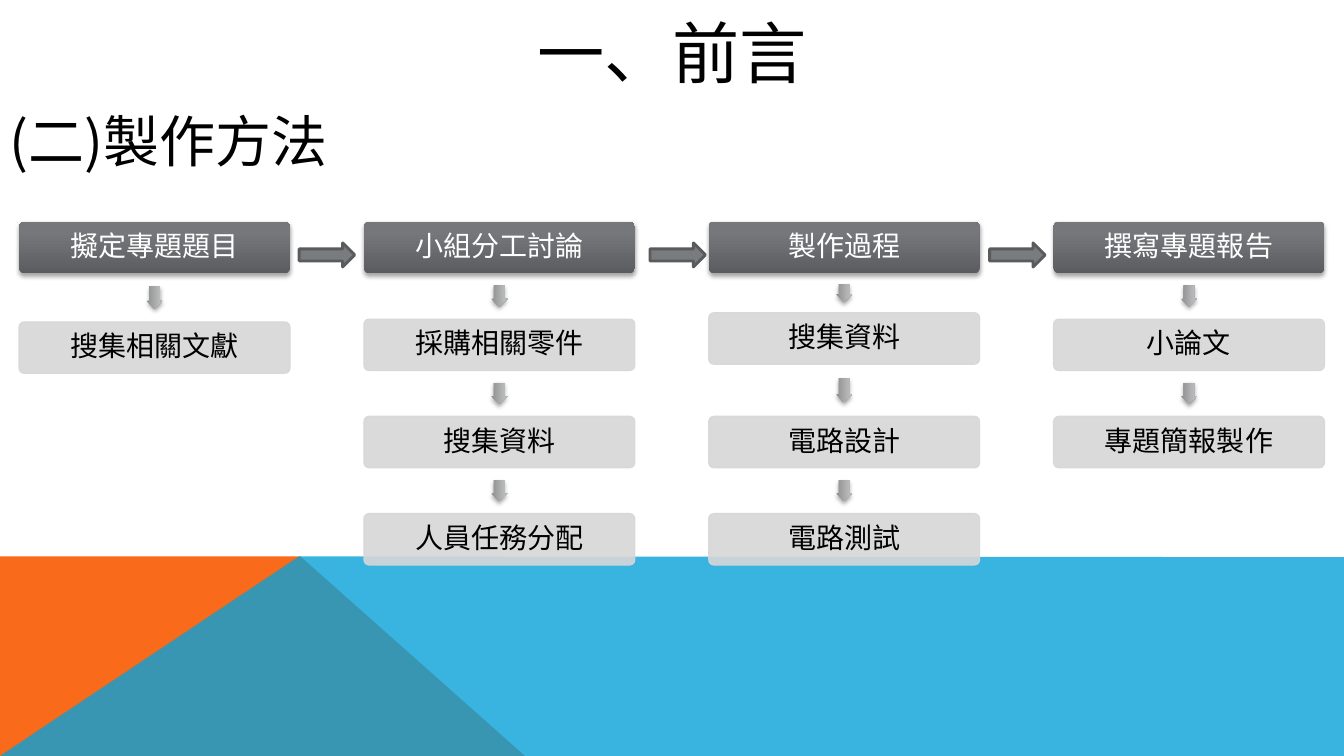
from dataclasses import dataclass

from lxml import etree
from pptx import Presentation
from pptx.dml.color import RGBColor
from pptx.enum.shapes import MSO_SHAPE
from pptx.enum.text import MSO_ANCHOR, PP_ALIGN
from pptx.oxml.ns import qn
from pptx.util import Cm, Pt

ROUNDED = MSO_SHAPE.ROUNDED_RECTANGLE
ARROW = MSO_SHAPE.RIGHT_ARROW
MIDDLE, TOP = MSO_ANCHOR.MIDDLE, MSO_ANCHOR.TOP
CENTER, LEFT = PP_ALIGN.CENTER, PP_ALIGN.LEFT


@dataclass(frozen=True)
class Theme:
    font: str = "Noto Sans CJK SC"
    title_size: int = 48
    subtitle_size: int = 40
    step_size: int = 20
    dark_text: str = "000000"
    light_text: str = "FFFFFF"
    orange: str = "F96A1B"
    blue: str = "08A1D9"
    header: tuple = ("5A5C5F", "75777B")
    step: str = "D7D7D8"
    step_arrow: tuple = ("8E8E8F", "B8B9BA")
    stage_arrow: str = "797B7E"
    stage_arrow_line: str = "5A5B5D"


THEME = Theme()
SLIDE_WIDTH, SLIDE_HEIGHT = 33.87, 19.05
BOX_WIDTH, BOX_HEIGHT = 6.83, 1.3
COLUMN_PITCH, ROW_PITCH = 8.69, 2.45

# Each stage: heading, then steps with their offset (cm) from the regular row
STAGES = [
    ("擬定專題題目", [("搜集相關文獻", 0.07)]),
    ("小組分工討論", [("採購相關零件", 0), ("搜集資料", 0), ("人員任務分配", 0)]),
    ("製作過程", [("搜集資料", -0.16), ("電路設計", 0), ("電路測試", 0)]),
    ("撰寫專題報告", [("小論文", 0), ("專題簡報製作", 0)]),
]
STAGE_ARROW_GAPS = [0.23, 0.38, 0.25]


def set_solid(color_format, color, opacity=100):
    """Fill with one colour; opacity is in percent."""
    color_format.solid()
    color_format.fore_color.rgb = RGBColor.from_string(color)
    if opacity < 100:
        solid = color_format._xPr.find(qn("a:solidFill"))
        etree.SubElement(solid[0], qn("a:alpha"), val=str(opacity * 1000))


def set_gradient(shape, colors):
    shape.fill.gradient()
    shape.fill.gradient_angle = 90
    for stop, color, position in zip(shape.fill.gradient_stops, colors, (0, 0.8)):
        stop.color.rgb = RGBColor.from_string(color)
        stop.position = position
    shape.line.fill.background()


def add_soft_shadow(shape):
    effects = shape._element.spPr.find(qn("a:effectLst"))
    shadow = etree.SubElement(
        effects, qn("a:outerShdw"), blurRad=str(Pt(3.1)), dist=str(Pt(1.8)),
        dir="5400000", rotWithShape="0")
    color = etree.SubElement(shadow, qn("a:srgbClr"), val="000000")
    etree.SubElement(color, qn("a:alpha"), val="35000")


def write_text(box, text, size, color, align=CENTER, anchor=MIDDLE):
    frame = box.text_frame
    frame.word_wrap = True
    frame.vertical_anchor = anchor
    para = frame.paragraphs[0]
    para.text = text
    para.alignment = align
    para.font.size = Pt(size)
    para.font.name = THEME.font
    para.font.color.rgb = RGBColor.from_string(color)
    defaults = para._p.get_or_add_pPr().find(qn("a:defRPr"))
    etree.SubElement(defaults, qn("a:ea"), typeface=THEME.font)
    return frame


def add_plain_shape(page, kind, left, top, width, height):
    shape = page.shapes.add_shape(kind, Cm(left), Cm(top), Cm(width), Cm(height))
    shape.shadow.inherit = False
    return shape


def add_banner(page, left, top, width, height):
    """Place the orange triangle and the translucent blue band over it."""
    bottom, right = top + height, left + width
    outlines = [
        (THEME.orange, 100, [(left, bottom), (left, top), (left + 7.57, top),
                             (left + 13.23, bottom)]),
        (THEME.blue, 80, [(left, bottom), (left + 7.54, top), (right, top + 0.02),
                          (right, bottom)]),
    ]
    for color, opacity, points in outlines:
        corners = [(Cm(x), Cm(y)) for x, y in points]
        builder = page.shapes.build_freeform(*corners[0])
        builder.add_line_segments(corners[1:], close=True)
        shape = builder.convert_to_shape()
        shape.shadow.inherit = False
        set_solid(shape.fill, color, opacity)
        shape.line.fill.background()


def add_heading(page, left, top, width, height, text, size, align, anchor):
    box = page.shapes.add_textbox(Cm(left), Cm(top), Cm(width), Cm(height))
    write_text(box, text, size, THEME.dark_text, align, anchor)


def add_label_box(page, left, top, text, color):
    shape = add_plain_shape(page, ROUNDED, left, top, BOX_WIDTH, BOX_HEIGHT)
    shape.adjustments[0] = 0.1
    frame = write_text(shape, text, THEME.step_size, color)
    frame.margin_left = frame.margin_right = Cm(0.08)
    frame.margin_top = frame.margin_bottom = Cm(0.08)
    frame.paragraphs[0].line_spacing = 0.9
    return shape


def add_step_arrow(page, center, top, bottom):
    """Place a down-pointing arrow in the gap between two boxes."""
    length, thickness = 0.47 * (bottom - top), 0.41
    arrow = add_plain_shape(page, ARROW, center - length / 2,
                            (top + bottom - thickness) / 2, length, thickness)
    arrow.rotation = 90
    arrow.adjustments[0] = 0.667
    set_gradient(arrow, THEME.step_arrow)
    add_soft_shadow(arrow)


def add_stage(page, left, top, heading, steps):
    header = add_label_box(page, left, top, heading, THEME.light_text)
    set_gradient(header, THEME.header)
    add_soft_shadow(header)
    above = top + BOX_HEIGHT
    for row, (text, offset) in enumerate(steps, start=1):
        step_top = top + row * ROW_PITCH + offset
        add_step_arrow(page, left + BOX_WIDTH / 2, above, step_top)
        step = add_label_box(page, left, step_top, text, THEME.dark_text)
        set_solid(step.fill, THEME.step, 90)
        set_solid(step.line.fill, THEME.step, 90)
        step.line.width = Pt(0.75)
        above = step_top + BOX_HEIGHT


def add_process(page, left, top):
    for column, (heading, steps) in enumerate(STAGES):
        add_stage(page, left + column * COLUMN_PITCH, top, heading, steps)
    for column, gap in enumerate(STAGE_ARROW_GAPS):
        arrow_left = left + column * COLUMN_PITCH + BOX_WIDTH + gap
        arrow = add_plain_shape(page, ARROW, arrow_left, top + 0.53, 1.4, 0.61)
        set_solid(arrow.fill, THEME.stage_arrow)
        set_solid(arrow.line.fill, THEME.stage_arrow_line)
        arrow.line.width = Pt(2)


def main():
    deck = Presentation()
    deck.slide_width, deck.slide_height = Cm(SLIDE_WIDTH), Cm(SLIDE_HEIGHT)
    page = deck.slides.add_slide(deck.slide_layouts[6])
    add_banner(page, 0, 14.02, SLIDE_WIDTH, SLIDE_HEIGHT - 14.02)
    add_heading(page, 4.24, 0.05, 25.4, 2.51, "一、前言",
                THEME.title_size, CENTER, MIDDLE)
    add_process(page, 0.48, 5.59)
    add_heading(page, 0, 2.57, 10.92, 1.96, "(二)製作方法",
                THEME.subtitle_size, LEFT, TOP)
    deck.save("out.pptx")


if __name__ == "__main__":
    main()
